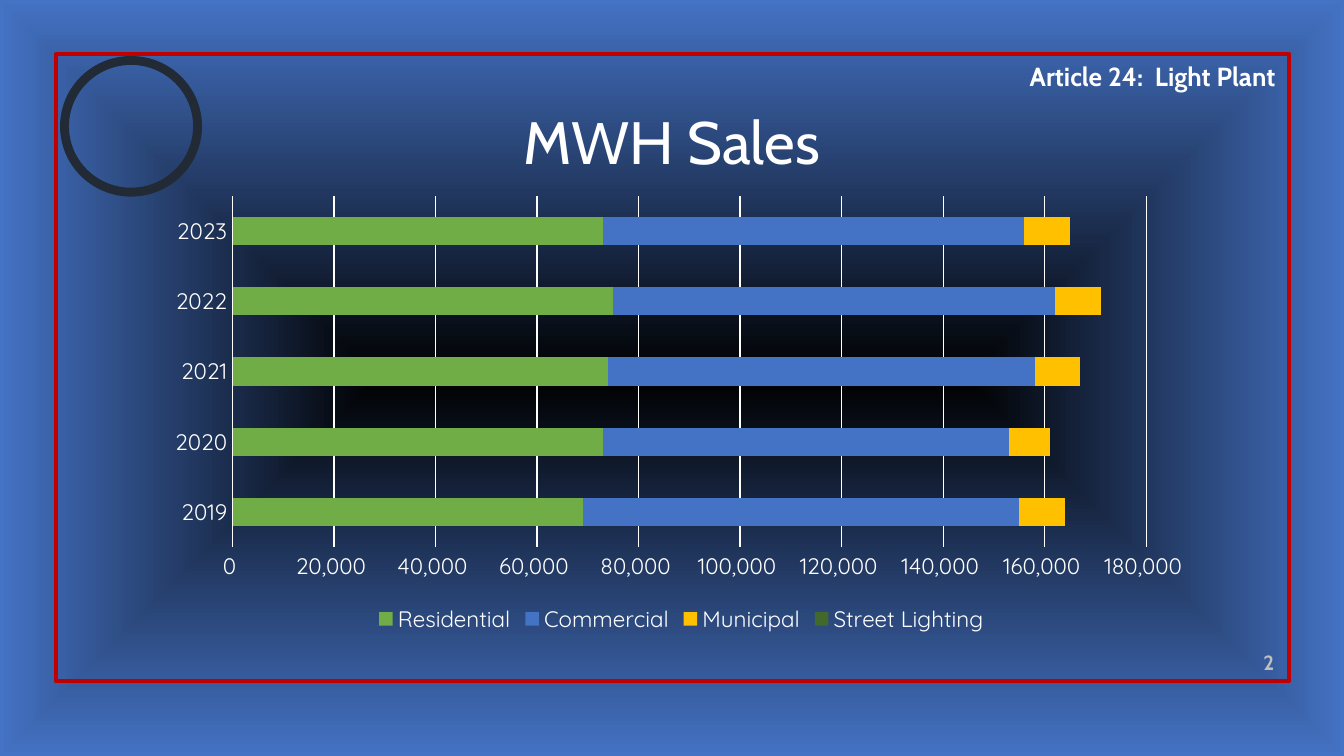
from typing import NamedTuple

from lxml import etree
from pptx import Presentation
from pptx import util as u
from pptx.chart import data as chart_data
from pptx.dml.color import RGBColor
from pptx.enum import chart as ch, shapes, text
from pptx.oxml import ns

WHITE = RGBColor(0xFF, 0xFF, 0xFF)
BLACK = RGBColor(0x00, 0x00, 0x00)
SILVER = RGBColor(0xBF, 0xBF, 0xBF)
RED = RGBColor(0xC0, 0x00, 0x00)
CHARCOAL = RGBColor(0x22, 0x2A, 0x35)
SLATE = RGBColor(0x44, 0x54, 0x6A)
BLUE = RGBColor(0x44, 0x72, 0xC4)
GREEN = RGBColor(0x70, 0xAD, 0x47)
AMBER = RGBColor(0xFF, 0xC0, 0x00)
DARK_GREEN = RGBColor(0x43, 0x68, 0x2B)

HEADING_FONT = "Cabin"
CHART_FONT = "Quicksand"
SLIDE_WIDTH = 10


class Box(NamedTuple):
    left: float
    top: float
    width: float
    height: float

    def lengths(self) -> list[u.Length]:
        return [u.Inches(side) for side in self]


class Outline(NamedTuple):
    preset: shapes.MSO_SHAPE
    box: Box
    color: RGBColor
    weight: float


class Sector(NamedTuple):
    name: str
    sales: tuple[int, ...]
    color: RGBColor


FRAME = Outline(shapes.MSO_SHAPE.RECTANGLE, Box(0.42, 0.4, 9.17, 4.67), RED, 2.25)
SEAL = Outline(shapes.MSO_SHAPE.OVAL, Box(0.48, 0.45, 0.99, 0.98), CHARCOAL, 4.75)
CHART = Box(1.14, 1.4, 7.86, 3.35)
PLOT = Box(1.73, 1.46, 6.8, 2.61)

YEARS = ("2019", "2020", "2021", "2022", "2023")
SECTORS = (
    Sector("Residential", (69000, 73000, 74000, 75000, 73000), GREEN),
    Sector("Commercial", (86000, 80000, 84000, 87000, 83000), BLUE),
    Sector("Municipal", (9000, 8000, 9000, 9000, 9000), AMBER),
    Sector("Street Lighting", (0, 0, 0, 0, 0), DARK_GREEN),
)


def paint_background(slide) -> None:
    slide.background.fill.gradient()
    gradient = slide.background._cSld.find(".//" + ns.qn("a:gradFill"))
    for part in list(gradient):
        gradient.remove(part)
    stops = etree.SubElement(gradient, ns.qn("a:gsLst"))
    for position, color in ((0, BLACK), (100, BLUE), (100, SLATE)):
        stop = etree.SubElement(stops, ns.qn("a:gs"), pos=str(position * 1000))
        etree.SubElement(stop, ns.qn("a:srgbClr"), val=str(color))
    shading = etree.SubElement(gradient, ns.qn("a:path"))
    shading.set("path", "shape")
    etree.SubElement(shading, ns.qn("a:fillToRect"),
                     l="50000", t="50000", r="50000", b="50000")


def draw_outline(slide, outline: Outline) -> None:
    ring = slide.shapes.add_shape(outline.preset, *outline.box.lengths())
    ring.shadow.inherit = False
    ring.fill.background()
    ring.line.color.rgb = outline.color
    ring.line.width = u.Pt(outline.weight)


def write(slide, wording: str, box: Box, *, size: float, color: RGBColor = WHITE,
          bold: bool = False, align=text.PP_ALIGN.RIGHT,
          anchor=text.MSO_ANCHOR.TOP) -> None:
    frame = slide.shapes.add_textbox(*box.lengths()).text_frame
    frame.word_wrap = True
    frame.vertical_anchor = anchor
    paragraph = frame.paragraphs[0]
    paragraph.alignment = align
    run = paragraph.add_run()
    run.text = wording
    style_font(run.font, HEADING_FONT, size, color, bold)


def style_font(font, name: str, size: float, color: RGBColor = WHITE,
               bold: bool = False) -> None:
    font.name = name
    font.size = u.Pt(size)
    font.color.rgb = color
    font.bold = bold


def place_plot(chart, area: Box, within: Box) -> None:
    plot_area = chart._chartSpace.chart.plotArea
    for old in plot_area.findall(ns.qn("c:layout")):
        plot_area.remove(old)
    layout = etree.Element(ns.qn("c:layout"))
    manual = etree.SubElement(layout, ns.qn("c:manualLayout"))
    settings = (("layoutTarget", "inner"), ("xMode", "edge"), ("yMode", "edge"),
                ("x", (area.left - within.left) / within.width),
                ("y", (area.top - within.top) / within.height),
                ("w", area.width / within.width),
                ("h", area.height / within.height))
    for tag, value in settings:
        etree.SubElement(manual, ns.qn(f"c:{tag}"), val=str(value))
    plot_area.insert(0, layout)


def draw_sales_chart(slide) -> None:
    sales = chart_data.CategoryChartData(number_format="#,##0")
    sales.categories = YEARS
    for sector in SECTORS:
        sales.add_series(sector.name, sector.sales)
    chart = slide.shapes.add_chart(ch.XL_CHART_TYPE.BAR_STACKED,
                                   *CHART.lengths(), sales).chart
    chart.has_title = False
    style_font(chart.font, CHART_FONT, 10)
    place_plot(chart, PLOT, CHART)

    bars = chart.plots[0]
    bars.gap_width = 150
    bars.overlap = 100
    bars.vary_by_categories = False
    for series, sector in zip(bars.series, SECTORS):
        series.format.fill.solid()
        series.format.fill.fore_color.rgb = sector.color

    for axis in (chart.category_axis, chart.value_axis):
        axis.major_tick_mark = axis.minor_tick_mark = ch.XL_TICK_MARK.NONE
        axis.format.line.fill.background()
        style_font(axis.tick_labels.font, CHART_FONT, 12)

    scale = chart.value_axis
    scale.minimum_scale = 0
    scale.maximum_scale = 180000
    scale.major_unit = 20000
    scale.tick_labels.number_format = r"#,##0_);\(#,##0\)"
    scale.tick_labels.number_format_is_linked = False
    scale.has_major_gridlines = True
    scale.major_gridlines.format.line.color.rgb = WHITE
    scale.major_gridlines.format.line.width = u.Pt(0.75)

    chart.has_legend = True
    chart.legend.position = ch.XL_LEGEND_POSITION.BOTTOM
    chart.legend.include_in_layout = False
    style_font(chart.legend.font, CHART_FONT, 12)


def main() -> None:
    deck = Presentation()
    deck.slide_width = u.Inches(SLIDE_WIDTH)
    deck.slide_height = u.Inches(SLIDE_WIDTH * 9 / 16)
    slide = deck.slides.add_slide(deck.slide_layouts[6])

    paint_background(slide)
    draw_outline(slide, FRAME)
    write(slide, "Article 24:  Light Plant", Box(6.92, 0.4, 2.67, 0.34),
          size=14, bold=True)
    draw_outline(slide, SEAL)
    write(slide, "MWH Sales", Box(0.49, 0.65, 9.02, 0.79), size=32,
          align=text.PP_ALIGN.CENTER, anchor=text.MSO_ANCHOR.MIDDLE)
    write(slide, "2", Box(9, 4.83, 0.58, 0.24), size=11, color=SILVER,
          bold=True, anchor=text.MSO_ANCHOR.BOTTOM)
    draw_sales_chart(slide)
    deck.save("out.pptx")


if __name__ == "__main__":
    main()
